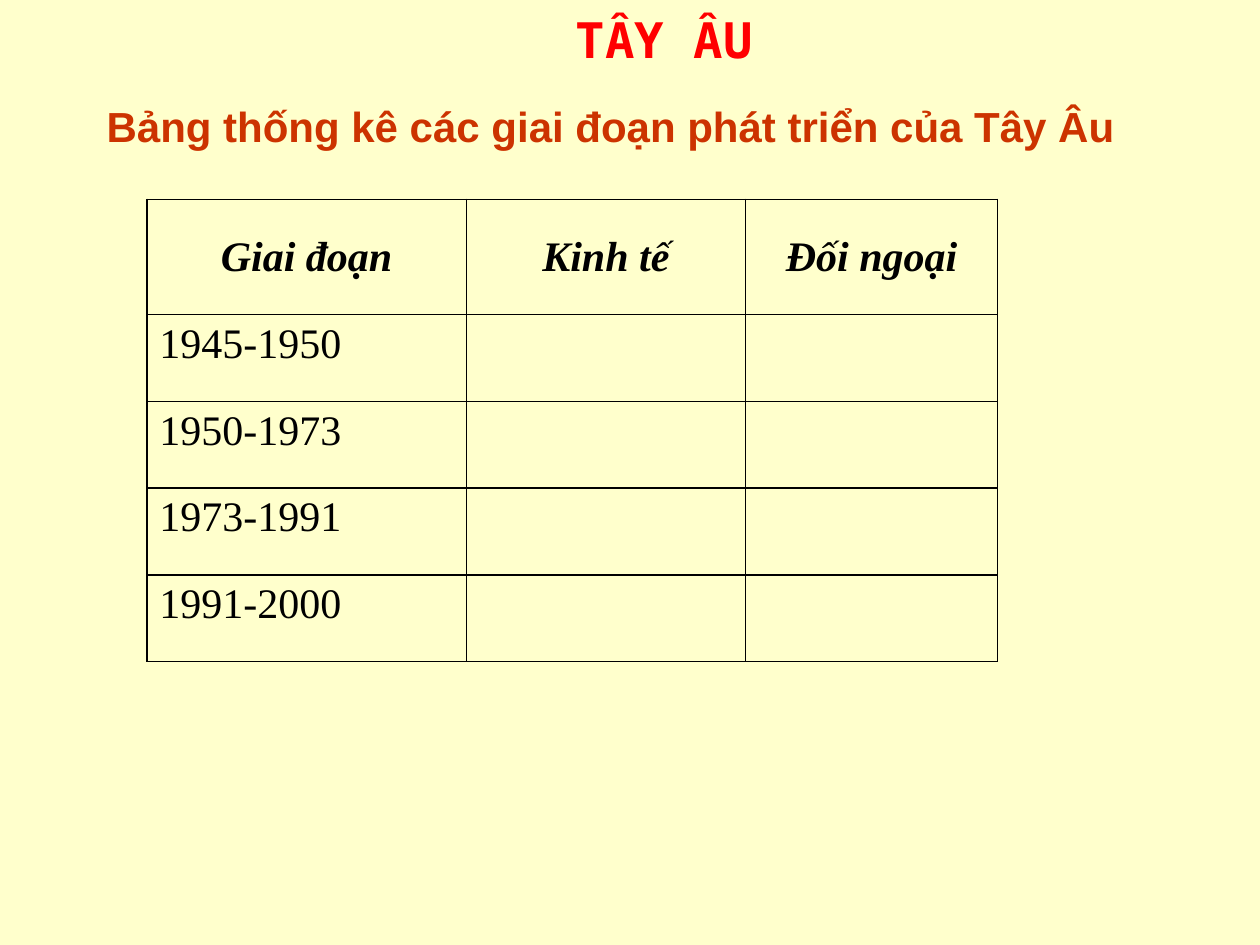
import pptx
import pptx.util
import pptx.dml.color
import pptx.enum.text
import pptx.oxml
import pptx.oxml.ns

Cm, Pt = pptx.util.Cm, pptx.util.Pt
RGB = pptx.dml.color.RGBColor
ALIGN = pptx.enum.text.PP_ALIGN
ANCHOR = pptx.enum.text.MSO_ANCHOR

CREAM = RGB(0xFF, 0xFF, 0xCC)
RED = RGB(0xFF, 0x00, 0x00)
RUST = RGB(0xCC, 0x33, 0x00)
BLACK = RGB(0x00, 0x00, 0x00)


class Page:
    """Holds the table style and the current slide."""

    face = "Times New Roman"
    size = 24
    edge = 1

    def __init__(self, slide):
        self.slide = slide
        fill = slide.background.fill
        fill.solid()
        fill.fore_color.rgb = CREAM

    def style(self, para, face, size, color, bold=False, slant=False):
        for run in para.runs:
            font = run.font
            font.name, font.size = face, Pt(size)
            font.bold, font.italic = bold, slant
            font.color.rgb = color

    def label(self, text, box, face, size, color):
        shape = self.slide.shapes.add_textbox(*map(Cm, box))
        frame = shape.text_frame
        frame.text = text
        self.style(frame.paragraphs[0], face, size, color, bold=True)
        return frame

    def border(self, cell):
        props = cell._tc.get_or_add_tcPr()
        for side in "LRTB":
            props.append(pptx.oxml.parse_xml(
                f'<a:ln{side} {pptx.oxml.ns.nsdecls("a")} w="{Pt(self.edge)}">'
                f'<a:solidFill><a:srgbClr val="{BLACK}"/></a:solidFill>'
                f'</a:ln{side}>'))

    def table(self, rows, left, top, widths, heights):
        shape = self.slide.shapes.add_table(
            len(rows), len(widths), Cm(left), Cm(top),
            Cm(sum(widths)), Cm(sum(heights)))
        grid = shape.table
        for col, width in zip(grid.columns, widths):
            col.width = Cm(width)
        for row, height in zip(grid.rows, heights):
            row.height = Cm(height)
        for r, row in enumerate(rows):
            head = r == 0
            for c in range(len(widths)):
                cell = grid.cell(r, c)
                self.border(cell)
                cell.fill.background()
                if c >= len(row):
                    continue
                cell.text_frame.text = row[c]
                cell.vertical_anchor = ANCHOR.MIDDLE if head else ANCHOR.TOP
                para = cell.text_frame.paragraphs[0]
                para.alignment = ALIGN.CENTER if head else ALIGN.JUSTIFY
                self.style(para, self.face, self.size, BLACK, head, head)


def main():
    deck = pptx.Presentation()
    deck.slide_width, deck.slide_height = Cm(25.4), Cm(19.05)
    page = Page(deck.slides.add_slide(deck.slide_layouts[6]))

    # Title, set slightly right of centre
    title = page.label("TÂY ÂU", (0, 0, 25.4, 19.05),
                       "DejaVu Sans Mono", 28, RED)
    title.word_wrap = True
    title.margin_left, title.margin_top = Cm(1.63), Cm(0.33)
    title.paragraphs[0].alignment = ALIGN.CENTER
    title.paragraphs[0].line_spacing = 0.9

    # Heading above the table
    head = page.label("Bảng thống kê các giai đoạn phát triển của Tây Âu",
                      (1.9, 1.9, 21.06, 1.28), "Arial", 24, RUST)
    head.word_wrap = False
    head.auto_size = pptx.enum.text.MSO_AUTO_SIZE.SHAPE_TO_FIT_TEXT
    head.vertical_anchor = ANCHOR.MIDDLE

    # Table of periods, left open for filling in
    spans = ["1945-1950", "1950-1973", "1973-1991", "1991-2000"]
    rows = [["Giai đoạn", "Kinh tế", "Đối ngoại"]] + [[s] for s in spans]
    page.table(rows, 2.96, 4.02, [6.44, 5.63, 5.08],
               [2.32] + [1.75] * len(spans))

    deck.save("out.pptx")


if __name__ == "__main__":
    main()
